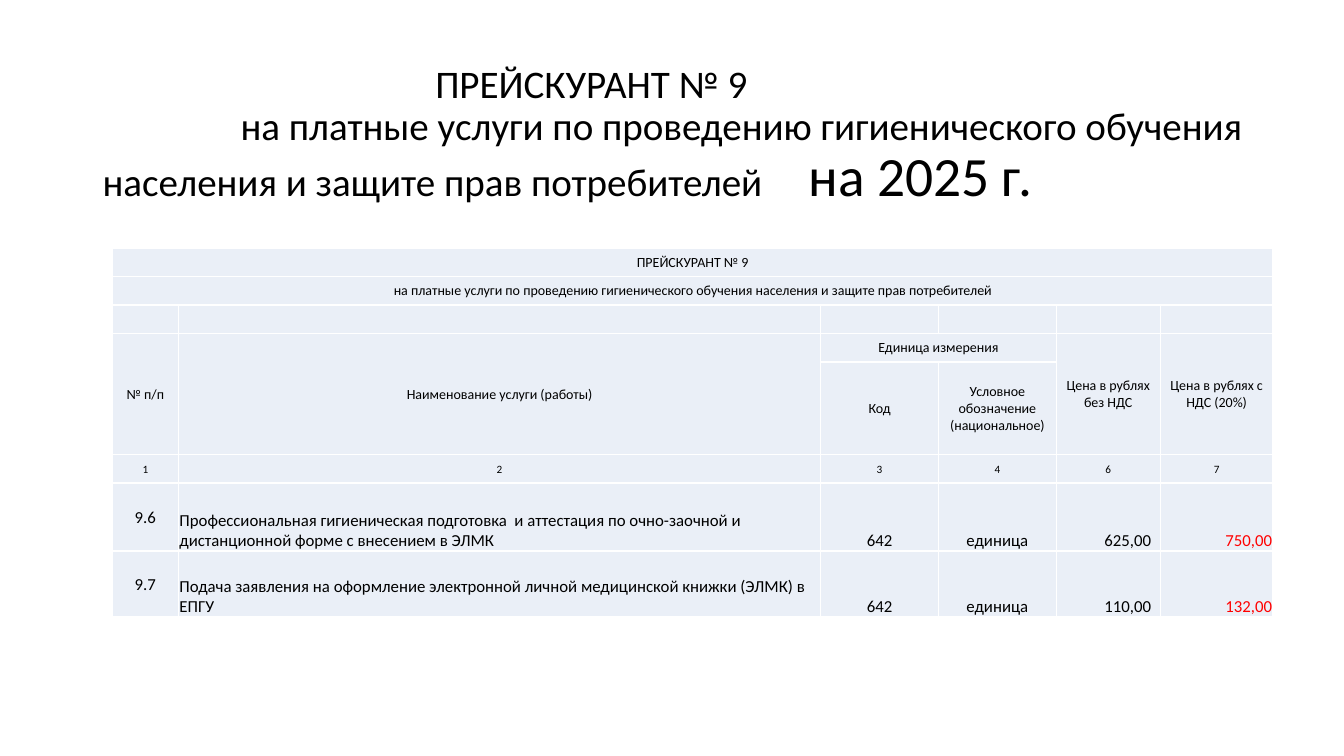
from lxml import etree
from pptx import Presentation
from pptx import util as u
from pptx.dml.color import RGBColor
from pptx.enum import text
from pptx.oxml.ns import qn

BLACK = RGBColor(0x00, 0x00, 0x00)
RED = RGBColor(0xFF, 0x00, 0x00)
PALE_BLUE = RGBColor(0xEA, 0xEF, 0xF7)
WHITE = RGBColor(0xFF, 0xFF, 0xFF)
LEFT, CENTER, RIGHT = text.PP_ALIGN.LEFT, text.PP_ALIGN.CENTER, text.PP_ALIGN.RIGHT
MIDDLE, BOTTOM = text.MSO_ANCHOR.MIDDLE, text.MSO_ANCHOR.BOTTOM

COLUMNS = [4.93, 47.78, 8.78, 8.75, 7.74, 8.4]
ROWS = [3.77] * 4 + [12.25, 3.77, 9, 8.73]
HEADINGS = [
    (0, 0, 1, 6, "ПРЕЙСКУРАНТ № 9"),
    (1, 0, 1, 6, "на платные услуги по проведению гигиенического обучения населения и защите прав потребителей"),
    (3, 0, 2, 1, "№ п/п"),
    (3, 1, 2, 1, "Наименование услуги (работы)"),
    (3, 2, 1, 2, "Единица измерения"),
    (3, 4, 2, 1, "Цена в рублях без НДС"),
    (3, 5, 2, 1, "Цена в рублях с НДС (20%)"),
    (4, 2, 1, 1, "Код"),
    (4, 3, 1, 1, "Условное обозначение (национальное)"),
]
NUMBERS_ROW = 5
SERVICES = [
    ("9.6", "Профессиональная гигиеническая подготовка  и аттестация по очно-заочной и "
     "дистанционной форме с внесением в ЭЛМК", "642", "единица", "625,00", "750,00"),
    ("9.7", "Подача заявления на оформление электронной личной медицинской книжки (ЭЛМК) в ЕПГУ",
     "642", "единица", "110,00", "132,00"),
]
SERVICE_ALIGN = [CENTER, LEFT, CENTER, CENTER, RIGHT, RIGHT]
ROW_SIZES = [10] * 5 + [8, 12, 12]


def write(para, words, size=10, color=BLACK, align=CENTER):
    """Add a formatted span to a paragraph."""
    para.alignment = align
    span = para.add_run()
    span.text = words
    span.font.name = "Calibri"
    span.font.size = u.Pt(size)
    span.font.color.rgb = color


class PriceSlide:
    """Hold the page, its 100 by 100 grid and the style of its elements."""

    def __init__(self, deck):
        """Add a blank page to the deck."""
        self.page = deck.slides.add_slide(deck.slide_layouts[6])
        self.column = deck.slide_width / 100
        self.row = deck.slide_height / 100

    def place(self, left, top, width, height):
        """Turn grid columns and rows into lengths."""
        return (int(left * self.column), int(top * self.row),
                int(width * self.column), int(height * self.row))

    def title(self, lines, *area):
        """Add a title whose lines are (spans, alignment, indent)."""
        frame = self.page.shapes.add_textbox(*self.place(*area)).text_frame
        frame.word_wrap = True
        for index, (spans, align, indent) in enumerate(lines):
            para = frame.add_paragraph() if index else frame.paragraphs[0]
            para.line_spacing = 0.9
            for words, size in spans:
                write(para, words, size, align=align)
            para._p.get_or_add_pPr().set("marL", str(int(indent * self.column)))

    def table(self, left, top, columns, rows):
        """Add an empty table with pale cells and white borders."""
        area = self.place(left, top, sum(columns), sum(rows))
        table = self.page.shapes.add_table(len(rows), len(columns), *area).table
        table.first_row = table.horz_banding = False
        for column, width in zip(table.columns, columns):
            column.width = int(width * self.column)
        for row, height, size in zip(table.rows, rows, ROW_SIZES):
            row.height = int(height * self.row)
            for cell in row.cells:
                self.style_cell(cell, size)
        return table

    def style_cell(self, cell, size):
        """Set the margins, borders, fill and text size of a cell."""
        cell.margin_left = cell.margin_right = cell.margin_top = u.Inches(0.01)
        cell.margin_bottom = 0
        cell.vertical_anchor = MIDDLE
        properties = cell._tc.get_or_add_tcPr()
        for side in ("a:lnL", "a:lnR", "a:lnT", "a:lnB"):
            line = etree.SubElement(properties, qn(side), w=str(u.Pt(1)))
            fill = etree.SubElement(line, qn("a:solidFill"))
            etree.SubElement(fill, qn("a:srgbClr"), val=str(WHITE))
        cell.fill.solid()
        cell.fill.fore_color.rgb = PALE_BLUE
        para = cell.text_frame.paragraphs[0]
        etree.SubElement(para._p, qn("a:endParaRPr"), sz=str(size * 100))


def main():
    """Build the price list and save it."""
    deck = Presentation()
    deck.slide_width, deck.slide_height = u.Inches(13.33), u.Inches(7.5)
    slide = PriceSlide(deck)
    slide.title([
        ([("ПРЕЙСКУРАНТ № 9", 27.9)], LEFT, 24.75),
        ([("на платные услуги по проведению гигиенического обучения", 27.9)], RIGHT, 0),
        ([("населения и защите прав потребителей", 27.9), ("\tна 2025 г.", 39.6)], LEFT, 0),
    ], 6.9, 7.9, 86.3, 20.7)

    table = slide.table(8.35, 32.8, COLUMNS, ROWS)
    for row, column, height, width, words in HEADINGS:
        cell = table.cell(row, column)
        if height * width > 1:
            cell.merge(table.cell(row + height - 1, column + width - 1))
        write(cell.text_frame.paragraphs[0], words)
    for column, number in enumerate("123467"):
        write(table.cell(NUMBERS_ROW, column).text_frame.paragraphs[0], number, 8)
    for row, service in enumerate(SERVICES, NUMBERS_ROW + 1):
        for column, (words, align) in enumerate(zip(service, SERVICE_ALIGN)):
            cell = table.cell(row, column)
            cell.vertical_anchor = BOTTOM if column else MIDDLE
            color = RED if column == 5 else BLACK
            write(cell.text_frame.paragraphs[0], words, 12, color, align)
        table.cell(row, 4).margin_right = u.Inches(0.09)

    deck.save("out.pptx")


if __name__ == "__main__":
    main()
